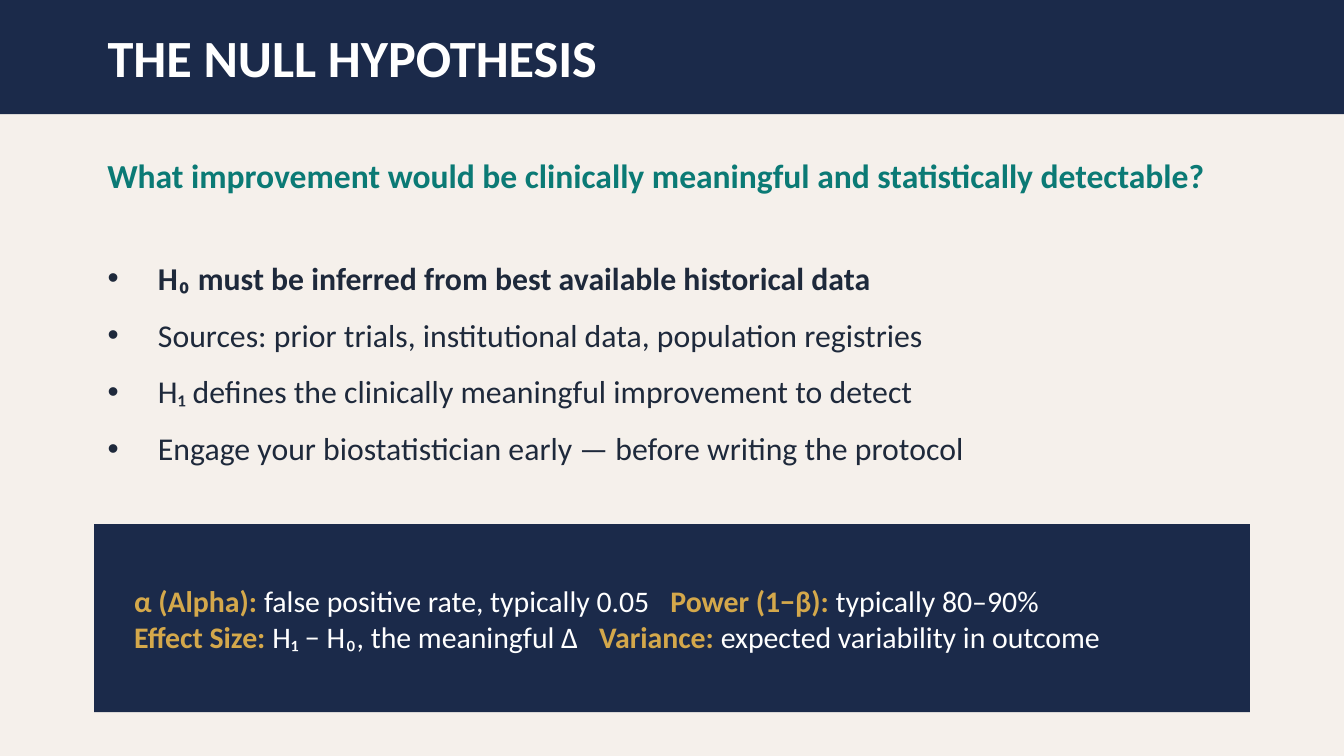
"""Build the null hypothesis slide."""
from typing import NamedTuple

from lxml import etree
from pptx import Presentation
from pptx.dml.color import RGBColor
from pptx.enum import shapes, text
from pptx.oxml.ns import qn
from pptx.util import Inches, Pt

FONT = "Calibri"
NAVY, CREAM, TEAL = "1B2A4A", "F5F0EB", "0B7A75"
INK, GOLD, WHITE = "1E293B", "D4A84B", "FFFFFF"


class Box(NamedTuple):
    left: float
    top: float
    width: float
    height: float


class Term(NamedTuple):
    label: str
    note: str


class Row(NamedTuple):
    first: Term
    second: Term
    stop: float


POINTS = [
    "H₀ must be inferred from best available historical data",
    "Sources: prior trials, institutional data, population registries",
    "H₁ defines the clinically meaningful improvement to detect",
    "Engage your biostatistician early — before writing the protocol",
]
ROWS = [
    Row(Term("α (Alpha): ", "false positive rate, typically 0.05"),
        Term("Power (1−β): ", "typically 80–90%"), 3.99),
    Row(Term("Effect Size: ", "H₁ − H₀, the meaningful Δ"),
        Term("Variance: ", "expected variability in outcome"), 3.46),
]


def color(code: str) -> RGBColor:
    return RGBColor.from_string(code)


def style(font, size: float, code: str, bold: bool = False) -> None:
    font.name, font.size, font.bold = FONT, Pt(size), bold
    font.color.rgb = color(code)


def place(shape, box: Box):
    shape.left, shape.top, shape.width, shape.height = map(Inches, box)
    frame = shape.text_frame
    frame.word_wrap = True
    frame.auto_size = text.MSO_AUTO_SIZE.NONE
    frame.vertical_anchor = text.MSO_ANCHOR.MIDDLE
    return frame


def add_panel(slide, box: Box):
    panel = slide.shapes.add_shape(shapes.MSO_SHAPE.RECTANGLE, *map(Inches, box))
    panel.shadow.inherit = False
    panel.fill.solid()
    panel.fill.fore_color.rgb = color(NAVY)
    panel.line.fill.background()
    return panel


def add_box(slide, box: Box):
    return place(slide.shapes.add_textbox(*map(Inches, box)), box)


def fill_line(frame, line: str, size: float, code: str) -> None:
    para = frame.paragraphs[0]
    para.text = line
    para.alignment = text.PP_ALIGN.LEFT
    style(para.font, size, code, True)


def fill_list(frame, lines: list[str]) -> None:
    frame.text = "\n".join(lines)
    indent = Inches(3 / 8)
    for i, para in enumerate(frame.paragraphs):
        para.space_before, para.space_after = Pt(0), Pt(10)
        props = para._p.get_or_add_pPr()
        props.set("marL", str(indent))
        props.set("indent", str(-indent))
        etree.SubElement(props, qn("a:buChar"), char="•")
        style(para.font, 17, INK, i == 0)


def fill_terms(frame, rows: list[Row]) -> None:
    for i, row in enumerate(rows):
        para = frame.add_paragraph() if i else frame.paragraphs[0]
        tabs = etree.SubElement(para._p.get_or_add_pPr(), qn("a:tabLst"))
        etree.SubElement(tabs, qn("a:tab"), pos=str(Inches(row.stop)), algn="l")
        parts = [(row.first.label, GOLD), (row.first.note + "\t", WHITE),
                 (row.second.label, GOLD), (row.second.note, WHITE)]
        for words, code in parts:
            run = para.add_run()
            run.text = words
            style(run.font, 16, code, code == GOLD)


def main() -> None:
    deck = Presentation()
    deck.slide_width, deck.slide_height = Inches(10), Inches(10 * 9 / 16)
    slide = deck.slides.add_slide(deck.slide_layouts[1])
    slide.background.fill.solid()
    slide.background.fill.fore_color.rgb = color(CREAM)
    title, body = slide.placeholders

    band = add_panel(slide, Box(0, 0, 10, 0.85))
    title._element.addprevious(band._element)
    fill_line(place(title, Box(0.7, 0.12, 8.6, 0.6)),
              "THE NULL HYPOTHESIS", 28, WHITE)
    fill_line(add_box(slide, Box(0.7, 1.05, 8.6, 0.5)),
              "What improvement would be clinically meaningful and "
              "statistically detectable?", 18, TEAL)
    fill_list(place(body, Box(0.7, 1.7, 8.6, 2)), POINTS)
    add_panel(slide, Box(0.7, 3.9, 8.6, 1.4))
    fill_terms(add_box(slide, Box(0.9, 4, 8.2, 1.2)), ROWS)
    deck.save("out.pptx")


if __name__ == "__main__":
    main()
